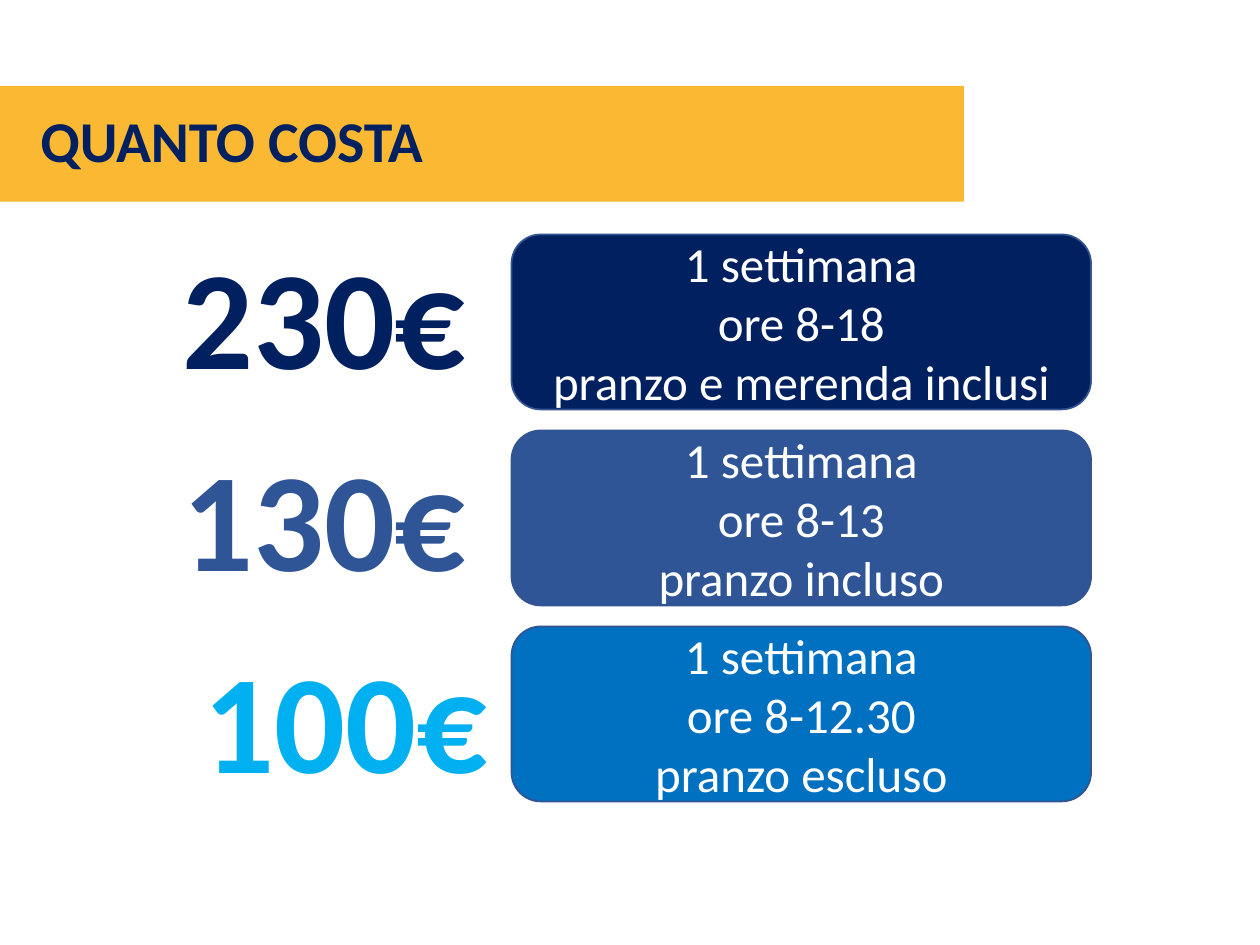
import pptx
import pptx.util
import pptx.dml.color
import pptx.enum.shapes
import pptx.enum.text

Pt = pptx.util.Pt
ALIGN = pptx.enum.text.PP_ALIGN
ANCHOR = pptx.enum.text.MSO_ANCHOR

COLORS = {
    "band": "FBB833",
    "navy": "002060",
    "blue": "2F5597",
    "azure": "0070C0",
    "sky": "00B0F0",
    "outline": "325491",
    "white": "FFFFFF",
}


def rgb(name):
    return pptx.dml.color.RGBColor.from_string(COLORS[name])


def add_text(paragraph, text, size, color, bold=False):
    run = paragraph.add_run()
    run.text = text
    run.font.name = "Calibri"
    run.font.size = Pt(size)
    run.font.bold = bold
    run.font.color.rgb = rgb(color)


presentation = pptx.Presentation()
presentation.slide_width = Pt(720)
presentation.slide_height = Pt(540)
slide = presentation.slides.add_slide(presentation.slide_layouts[5])

title = slide.shapes.title
title.left, title.top, title.width, title.height = Pt(0), Pt(49), Pt(550.8), Pt(66.2)
title.fill.solid()
title.fill.fore_color.rgb = rgb("band")
title.text_frame.vertical_anchor = ANCHOR.MIDDLE
paragraph = title.text_frame.paragraphs[0]
paragraph.alignment = ALIGN.LEFT
paragraph.line_spacing = 0.9
paragraph._p.get_or_add_pPr().set("marL", str(Pt(15.84)))
add_text(paragraph, "QUANTO COSTA", 33, "navy", True)

offers = [
    ("230€", "navy", 96.5, "navy", ["1 settimana", "ore 8-18", "pranzo e merenda inclusi"]),
    ("130€", "blue", 96.5, "blue", ["1 settimana", "ore 8-13", "pranzo incluso"]),
    ("100€", "sky", 108.7, "azure", ["1 settimana", "ore 8-12.30", "pranzo escluso"]),
]

for row, (price, price_color, price_left, card_color, lines) in enumerate(offers):
    price_box = slide.shapes.add_textbox(
        Pt(price_left), Pt(127.5 + row * 115.6), Pt(177.8), Pt(104.4))
    price_box.text_frame.word_wrap = False
    price_box.text_frame.auto_size = pptx.enum.text.MSO_AUTO_SIZE.SHAPE_TO_FIT_TEXT
    paragraph = price_box.text_frame.paragraphs[0]
    paragraph.alignment = ALIGN.CENTER
    add_text(paragraph, price, 80, price_color, True)

    card = slide.shapes.add_shape(
        pptx.enum.shapes.MSO_SHAPE.ROUNDED_RECTANGLE,
        Pt(292.3), Pt(134) + Pt(112) * row, Pt(331.2), Pt(100))
    card.shadow.inherit = False
    card.fill.solid()
    card.fill.fore_color.rgb = rgb(card_color)
    card.line.color.rgb = rgb("outline")
    card.line.width = Pt(1)
    card.text_frame.word_wrap = True
    card.text_frame.vertical_anchor = ANCHOR.MIDDLE
    paragraph = card.text_frame.paragraphs[0]
    paragraph.alignment = ALIGN.CENTER
    for index, line in enumerate(lines):
        if index:
            paragraph.add_line_break()
        add_text(paragraph, line, 28, "white")

presentation.save("out.pptx")
